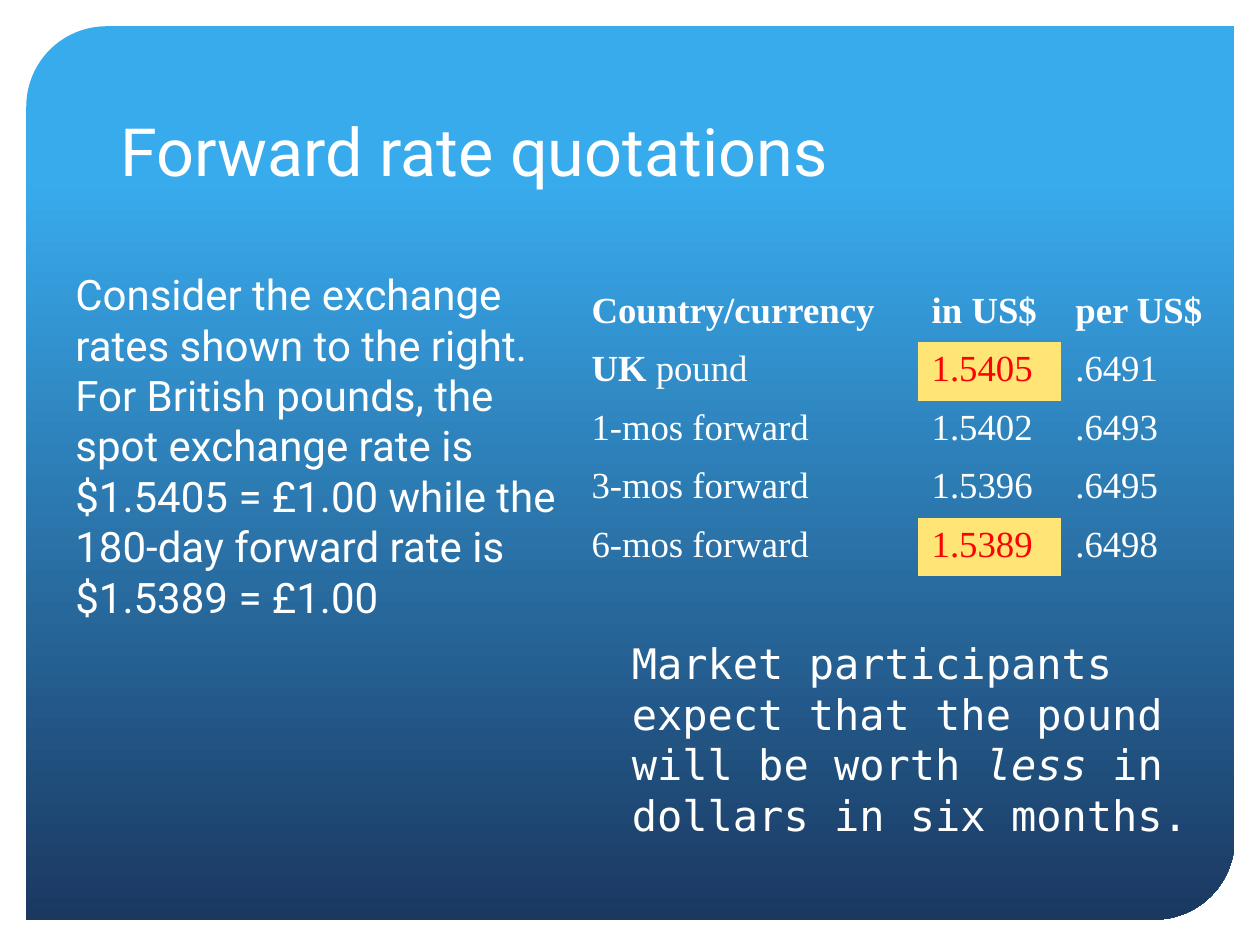
from pptx import Presentation
from pptx.dml.color import RGBColor
from pptx.enum.shapes import MSO_SHAPE
from pptx.enum.text import MSO_ANCHOR
from pptx.oxml.ns import qn
from pptx.util import Pt

WHITE, RED, YELLOW = "FFFFFF", "FF0000", "FFE575"
SKY, NAVY = "38ABED", "1B3861"
SANS, SERIF, MONO = "Roboto", "Times New Roman", "DejaVu Sans Mono"
PLAIN_TABLE_STYLE = "{2D5ABB26-0587-4C30-8999-92F81FD0307C}"

COLUMN_WIDTHS = [194.4, 82.08, 90.72]
ROW_HEIGHT = 33.5
RATES = [
    ("Country/currency", "in US$", "per US$"),
    ("UK pound", "1.5405", ".6491"),
    ("1-mos forward", "1.5402", ".6493"),
    ("3-mos forward", "1.5396", ".6495"),
    ("6-mos forward", "1.5389", ".6498"),
]
HIGHLIGHTED = {(1, 1), (4, 1)}


def color(hex_code):
    return RGBColor.from_string(hex_code)


def add_span(para, text, font, size, hex_code=WHITE, bold=False, italic=False):
    span = para.add_run()
    span.text = text
    span.font.name = font
    span.font.size = Pt(size)
    span.font.bold = bold
    span.font.italic = italic
    span.font.color.rgb = color(hex_code)


def add_panel(page):
    """Add the gradient background with two rounded corners."""
    panel = page.shapes.add_shape(
        MSO_SHAPE.ROUND_2_DIAG_RECTANGLE, Pt(15), Pt(15), Pt(690.5), Pt(510.5))
    panel.adjustments[0] = 0.09
    panel.adjustments[1] = 0
    panel.shadow.inherit = False
    panel.line.fill.background()
    panel.fill.gradient()
    panel.fill.gradient_angle = 270
    stops = [(0.17, SKY), (1, NAVY)]
    for stop, (position, hex_code) in zip(panel.fill.gradient_stops, stops):
        stop.position = position
        stop.color.rgb = color(hex_code)


def add_text(page, left, top, width, height, spans, font, size,
             anchor=MSO_ANCHOR.TOP):
    """Add a one-paragraph box from (text, italic) pairs."""
    box = page.shapes.add_textbox(Pt(left), Pt(top), Pt(width), Pt(height))
    frame = box.text_frame
    frame.word_wrap = True
    frame.vertical_anchor = anchor
    for text, italic in spans:
        add_span(frame.paragraphs[0], text, font, size, italic=italic)


def fill_cell(cell, text, is_header, is_highlighted):
    cell.margin_left = cell.margin_right = Pt(8)
    cell.margin_top = cell.margin_bottom = Pt(4)
    if is_highlighted:
        cell.fill.solid()
        cell.fill.fore_color.rgb = color(YELLOW)
    else:
        cell.fill.background()
    para = cell.text_frame.paragraphs[0]
    if text.startswith("UK "):
        add_span(para, "UK ", SERIF, 21, bold=True)
        text = text.removeprefix("UK ")
    add_span(para, text, SERIF, 21, RED if is_highlighted else WHITE, is_header)


def add_rate_table(page):
    frame = page.shapes.add_table(
        len(RATES), len(COLUMN_WIDTHS), Pt(330), Pt(162),
        Pt(sum(COLUMN_WIDTHS)), Pt(ROW_HEIGHT * len(RATES)))
    table = frame.table
    table.first_row = table.horz_banding = False
    next(frame.element.iter(qn("a:tableStyleId"))).text = PLAIN_TABLE_STYLE
    for column, width in zip(table.columns, COLUMN_WIDTHS):
        column.width = Pt(width)
    for r, values in enumerate(RATES):
        table.rows[r].height = Pt(ROW_HEIGHT)
        for c, text in enumerate(values):
            fill_cell(table.cell(r, c), text, r == 0, (r, c) in HIGHLIGHTED)


def main():
    deck = Presentation()
    deck.slide_width, deck.slide_height = Pt(720), Pt(540)
    page = deck.slides.add_slide(deck.slide_layouts[6])
    add_panel(page)
    add_text(page, 61.5, 30, 597, 82, [("Forward rate quotations", False)],
             SANS, 38, MSO_ANCHOR.BOTTOM)
    add_text(page, 36, 150, 300, 356, [
        ("Consider the exchange rates shown to the right. For British pounds, "
         "the spot exchange rate is $1.5405 = £1.00 while the 180-day forward "
         "rate is $1.5389 = £1.00", False)], SANS, 24)
    add_rate_table(page)
    add_text(page, 354, 361, 360, 96, [
        ("Market participants expect that the pound will be worth ", False),
        ("less", True),
        (" in dollars in six months.", False)], MONO, 24)
    deck.save("out.pptx")


if __name__ == "__main__":
    main()
